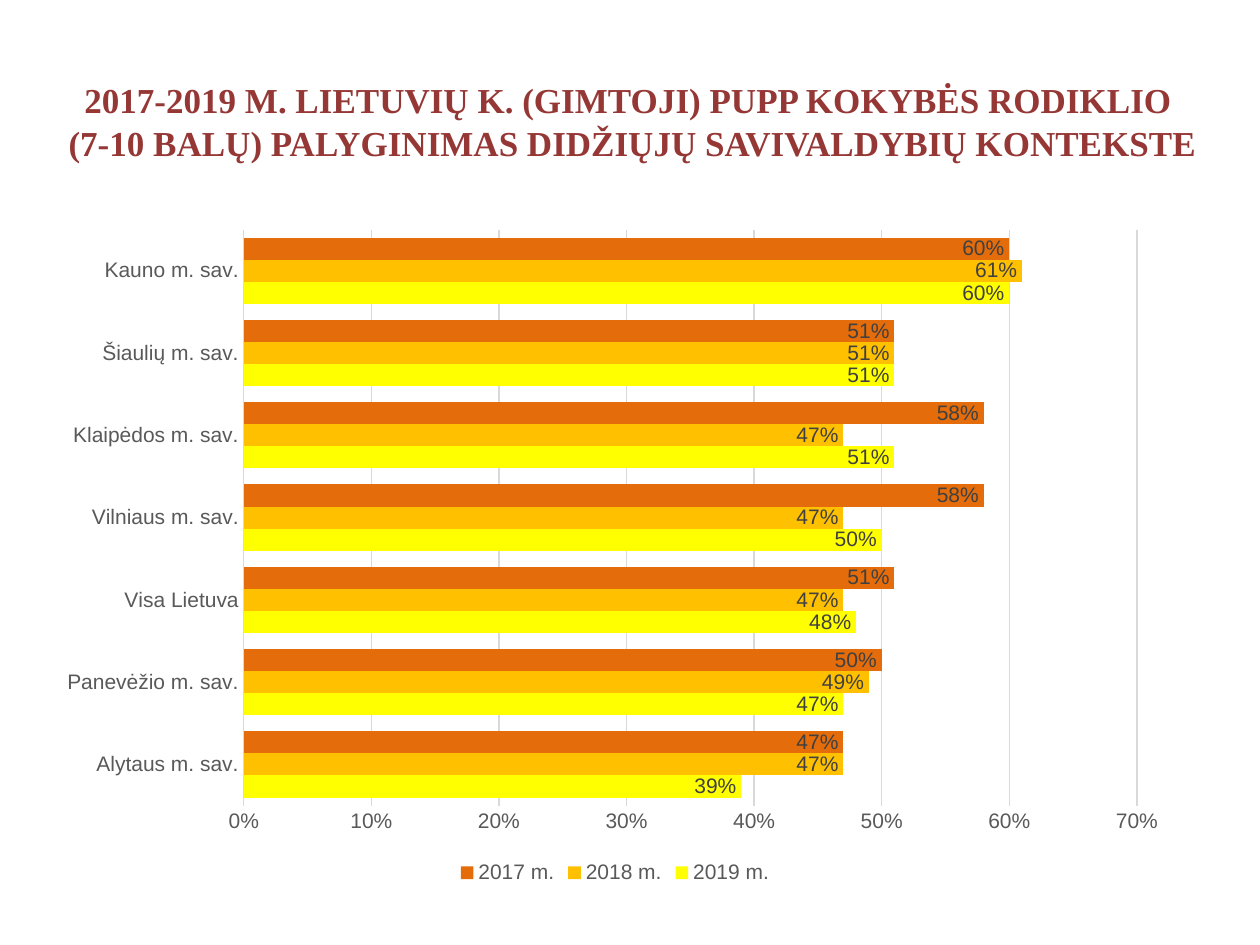
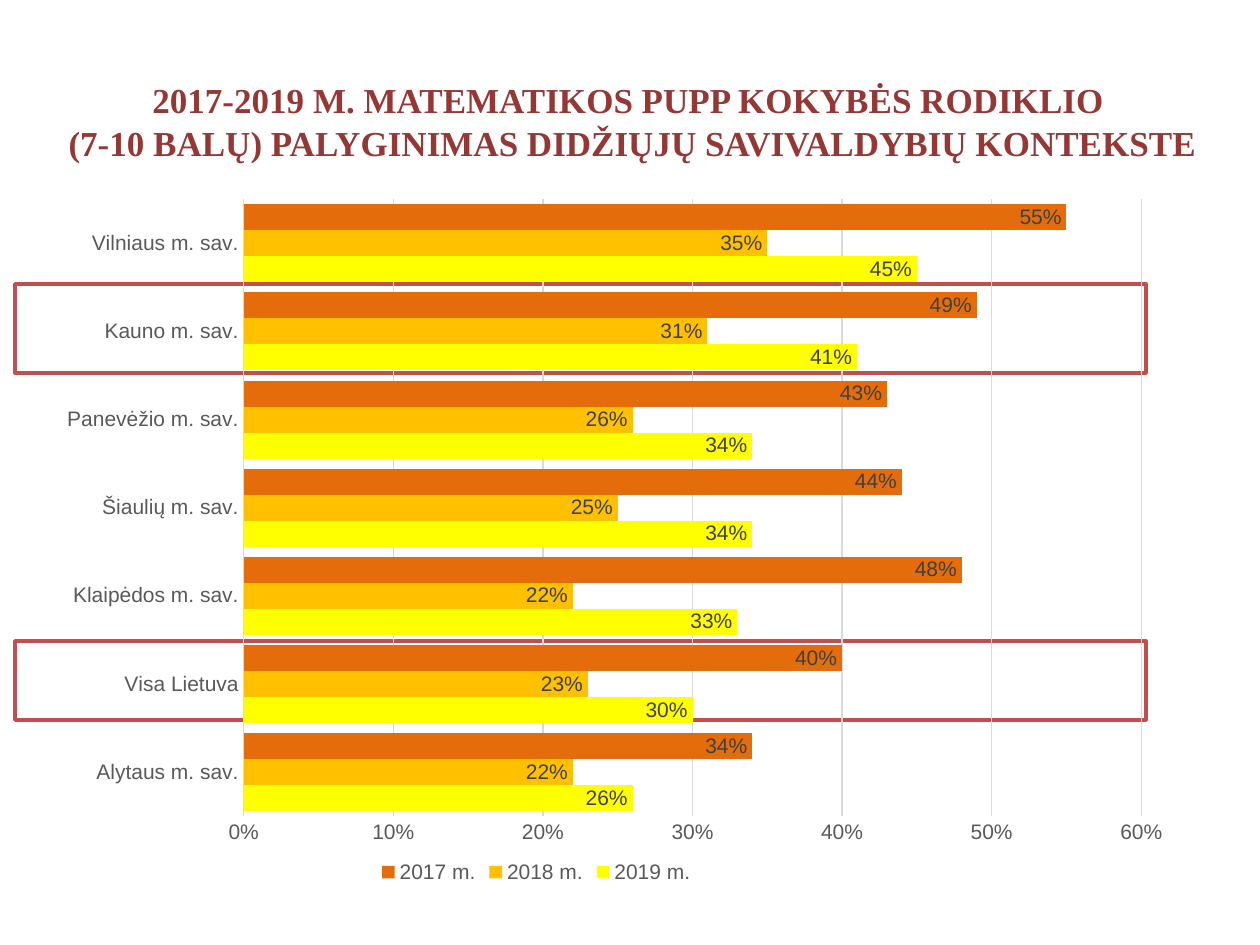
"""Builds two slides comparing exam quality indicators across large municipalities."""
from lxml.etree import SubElement
from pptx import Presentation
from pptx.chart.data import CategoryChartData
from pptx.dml.color import RGBColor
from pptx.enum.chart import XL_CHART_TYPE as ChartType
from pptx.enum.chart import XL_LABEL_POSITION as LabelPosition
from pptx.enum.chart import XL_LEGEND_POSITION as LegendPosition
from pptx.enum.chart import XL_TICK_MARK as TickMark
from pptx.enum.shapes import MSO_SHAPE as ShapeKind
from pptx.enum.text import MSO_ANCHOR as Anchor
from pptx.enum.text import PP_ALIGN as Align
from pptx.oxml import parse_xml
from pptx.oxml.ns import nsdecls, qn
from pptx.util import Pt

SCALE = 914400 / 126
SLIDE_SIZE = 1260, 945
TITLE_BOX = 4, 66, 1257, 110
TITLE_FONT, CHART_FONT = "Times New Roman", "Arial"

TITLE_COLOR = RGBColor(0x95, 0x37, 0x35)
AXIS_COLOR = RGBColor(0x59, 0x59, 0x59)
LABEL_COLOR = RGBColor(0x40, 0x40, 0x40)
GRID_COLOR = RGBColor(0xD9, 0xD9, 0xD9)
FRAME_COLOR = RGBColor(0xC0, 0x50, 0x4D)
WHITE = RGBColor(0xFF, 0xFF, 0xFF)

YEARS = [
    ("2019 m.", RGBColor(0xFF, 0xFF, 0x00)),
    ("2018 m.", RGBColor(0xFF, 0xC0, 0x00)),
    ("2017 m.", RGBColor(0xE4, 0x6C, 0x0A)),
]
TITLE_END = "(7-10 BALŲ) PALYGINIMAS DIDŽIŲJŲ SAVIVALDYBIŲ KONTEKSTE"

SLIDES = [
    {
        "subject": "LIETUVIŲ K. (GIMTOJI)",
        "chart_box": (35, 195, 1160, 694),
        "plot": (0.18, 0.05, 0.77, 0.83),
        "legend": None,
        "gap": 72,
        "maximum": 0.7,
        "frames": [],
        "percents": {
            "Alytaus m. sav.": (39, 47, 47),
            "Panevėžio m. sav.": (47, 49, 50),
            "Visa Lietuva": (48, 47, 51),
            "Vilniaus m. sav.": (50, 47, 58),
            "Klaipėdos m. sav.": (51, 47, 58),
            "Šiaulių m. sav.": (51, 51, 51),
            "Kauno m. sav.": (60, 61, 60),
        },
    },
    {
        "subject": "MATEMATIKOS",
        "chart_box": (44, 185, 1142, 714),
        "plot": (0.175, 0.02, 0.786, 0.864),
        "legend": (0.29, 0.94),
        "gap": 39,
        "maximum": 0.6,
        "frames": [(15, 641, 1131, 79), (15, 284, 1131, 89)],
        "percents": {
            "Alytaus m. sav.": (26, 22, 34),
            "Visa Lietuva": (30, 23, 40),
            "Klaipėdos m. sav.": (33, 22, 48),
            "Šiaulių m. sav.": (34, 25, 44),
            "Panevėžio m. sav.": (34, 26, 43),
            "Kauno m. sav.": (41, 31, 49),
            "Vilniaus m. sav.": (45, 35, 55),
        },
    },
]


def emu(lengths):
    return [round(length * SCALE) for length in lengths]


def style_font(font, name, size, color):
    font.name, font.size = name, Pt(size)
    font.color.rgb = color


def add_title(slide, subject):
    frame = slide.shapes.add_textbox(*emu(TITLE_BOX)).text_frame
    frame.word_wrap = True
    frame.vertical_anchor = Anchor.MIDDLE
    paragraph = frame.paragraphs[0]
    paragraph.text = f"2017-2019 M. {subject} PUPP KOKYBĖS RODIKLIO \v{TITLE_END}"
    paragraph.alignment = Align.CENTER
    for run in paragraph.runs:
        style_font(run.font, TITLE_FONT, 20, TITLE_COLOR)
        run.font.bold = True


def add_frame(slide, box):
    shape = slide.shapes.add_shape(ShapeKind.RECTANGLE, *emu(box))
    shape.shadow.inherit = False
    shape.fill.solid()
    shape.fill.fore_color.rgb = WHITE
    shape.line.color.rgb = FRAME_COLOR
    shape.line.width = Pt(2)


def set_layout(element, position, inner=False):
    for old in element.findall(qn("c:layout")):
        element.remove(old)
    layout = parse_xml(f"<c:layout {nsdecls('c')}/>")
    manual = SubElement(layout, qn("c:manualLayout"))
    settings = [("layoutTarget", "inner")] if inner else []
    settings += [("xMode", "edge"), ("yMode", "edge")]
    settings += zip("xywh", position)
    for name, value in settings:
        SubElement(manual, qn(f"c:{name}")).set("val", str(value))
    if inner:
        element.insert(0, layout)
    else:
        element.find(qn("c:legendPos")).addnext(layout)


def no_fill():
    return parse_xml(
        f"<c:spPr {nsdecls('c', 'a')}><a:noFill/><a:ln><a:noFill/></a:ln></c:spPr>"
    )


def style_axes(chart, maximum):
    for axis in (chart.category_axis, chart.value_axis):
        axis.major_tick_mark = axis.minor_tick_mark = TickMark.NONE
        axis.format.line.fill.background()
        style_font(axis.tick_labels.font, CHART_FONT, 12, AXIS_COLOR)
    axis = chart.value_axis
    axis.minimum_scale, axis.maximum_scale, axis.major_unit = 0, maximum, 0.1
    axis.tick_labels.number_format = "0%"
    axis.tick_labels.number_format_is_linked = False
    axis.major_gridlines.format.line.color.rgb = GRID_COLOR
    axis.major_gridlines.format.line.width = Pt(0.75)


def style_series(plot):
    for series, (_, color) in zip(plot.series, YEARS):
        series.format.fill.solid()
        series.format.fill.fore_color.rgb = color
        labels = series.data_labels
        labels.show_value = True
        labels.position = LabelPosition.INSIDE_END
        labels.number_format = "0%"
        labels.number_format_is_linked = False
        style_font(labels.font, CHART_FONT, 12, LABEL_COLOR)


def add_bar_chart(slide, content):
    percents = content["percents"]
    data = CategoryChartData(number_format="0%")
    data.categories = list(percents)
    for (year, _), values in zip(YEARS, zip(*percents.values())):
        data.add_series(year, [value / 100 for value in values])
    chart = slide.shapes.add_chart(
        ChartType.BAR_CLUSTERED, *emu(content["chart_box"]), data
    ).chart
    chart.has_title = False
    chart.font.name, chart.font.size = CHART_FONT, Pt(12)
    plot = chart.plots[0]
    plot.gap_width, plot.overlap = content["gap"], 0
    plot.vary_by_categories = False
    style_axes(chart, content["maximum"])
    style_series(plot)

    chart.has_legend = True
    chart.legend.position = LegendPosition.BOTTOM
    chart.legend.include_in_layout = False
    style_font(chart.legend.font, CHART_FONT, 12, AXIS_COLOR)

    chart_space = chart.element
    plot_area = chart_space.chart.plotArea
    set_layout(plot_area, content["plot"], inner=True)
    if content["legend"]:
        set_layout(chart_space.chart.find(qn("c:legend")), content["legend"])
    plot_area.append(no_fill())
    chart_space.chart.addnext(no_fill())


def main():
    presentation = Presentation()
    presentation.slide_width, presentation.slide_height = emu(SLIDE_SIZE)
    for content in SLIDES:
        slide = presentation.slides.add_slide(presentation.slide_layouts[6])
        for box in content["frames"]:
            add_frame(slide, box)
        add_bar_chart(slide, content)
        add_title(slide, content["subject"])
    presentation.save("out.pptx")


if __name__ == "__main__":
    main()
